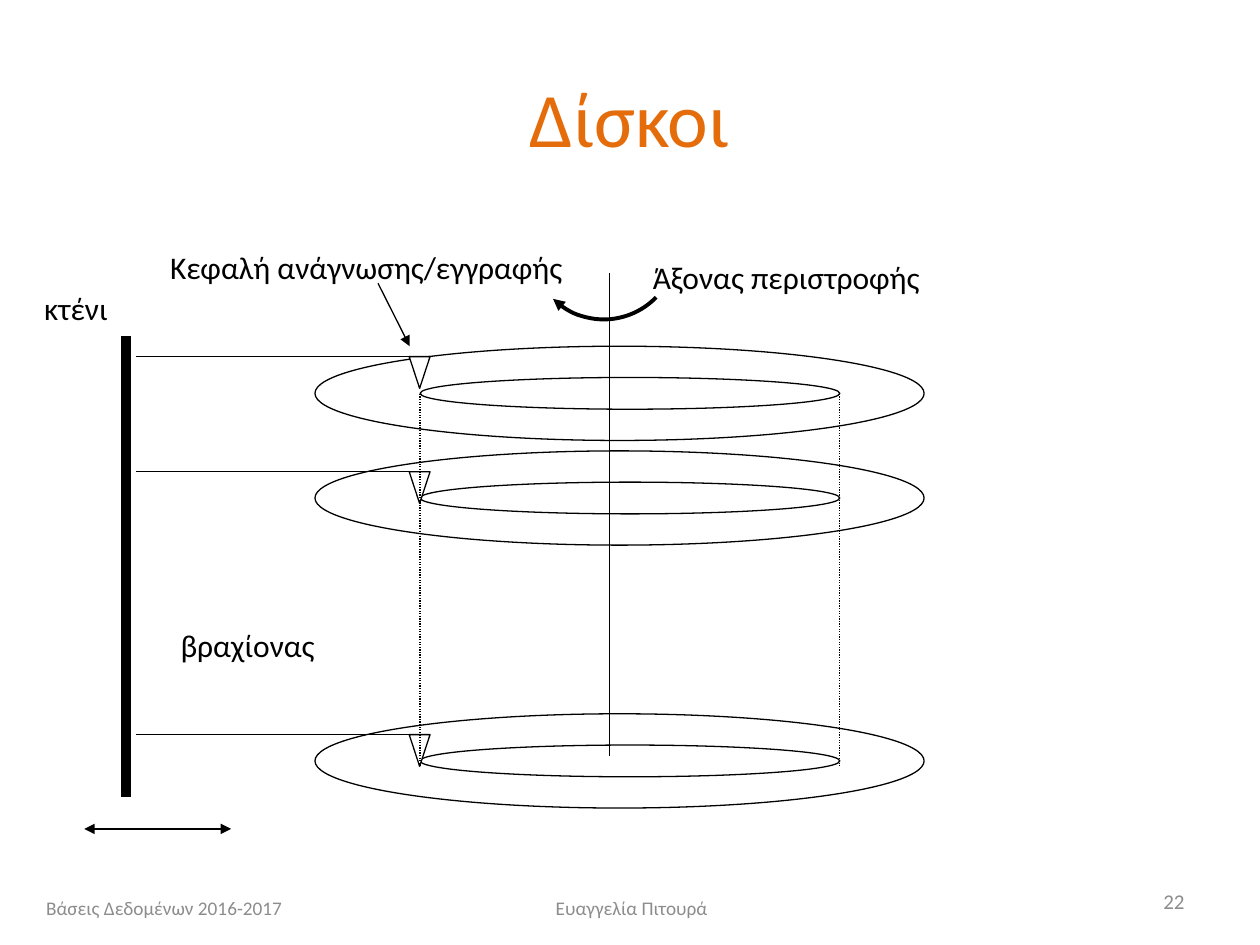
from lxml import etree
from pptx import Presentation
from pptx.dml.color import RGBColor
from pptx.enum.dml import MSO_LINE
from pptx.enum.shapes import MSO_CONNECTOR, MSO_SHAPE
from pptx.enum.text import MSO_ANCHOR, PP_ALIGN
from pptx.oxml.ns import qn
from pptx.util import Cm, Pt

BLACK = RGBColor(0x00, 0x00, 0x00)
WHITE = RGBColor(0xFF, 0xFF, 0xFF)
ORANGE = RGBColor(0xE4, 0x6C, 0x0A)
GREY = RGBColor(0x8C, 0x8C, 0x8C)
FONT = "Calibri"
STRAIGHT = MSO_CONNECTOR.STRAIGHT
DOTTED = MSO_LINE.ROUND_DOT
ELLIPSE, MERGE, ARC = MSO_SHAPE.OVAL, MSO_SHAPE.FLOWCHART_MERGE, MSO_SHAPE.ARC
TOP, MIDDLE = MSO_ANCHOR.TOP, MSO_ANCHOR.MIDDLE
LEFT, CENTER, RIGHT = PP_ALIGN.LEFT, PP_ALIGN.CENTER, PP_ALIGN.RIGHT


def format_text(text_frame, text, size, color, align, anchor):
    """Fill a text frame with one formatted paragraph."""
    text_frame.text = text
    text_frame.word_wrap = True
    text_frame.vertical_anchor = anchor
    paragraph = text_frame.paragraphs[0]
    paragraph.alignment = align
    font = paragraph.runs[0].font
    font.name, font.size, font.color.rgb = FONT, Pt(size), color


def add_label(slide, box, text, size=18, color=BLACK, align=LEFT, anchor=TOP):
    """Add a text box at box, given as left, top, width, height in cm."""
    shape = slide.shapes.add_textbox(*map(Cm, box))
    format_text(shape.text_frame, text, size, color, align, anchor)


def add_arrowheads(shape, *ends):
    """Put a triangle on the named ends of an outlined shape or connector."""
    outline = shape._element.spPr.find(qn("a:ln"))
    for end in ends:
        etree.SubElement(outline, qn(f"a:{end}"), type="triangle")


def add_line(slide, start, end, width=0.75, dash=None, arrows=()):
    """Draw a straight black line between two points in cm."""
    connector = slide.shapes.add_connector(STRAIGHT, *map(Cm, (*start, *end)))
    connector.line.color.rgb = BLACK
    connector.line.width = Pt(width)
    if dash:
        connector.line.dash_style = dash
    add_arrowheads(connector, *arrows)
    etree.SubElement(connector._element.spPr, qn("a:effectLst"))


def add_outline(slide, kind, box, width=0.75):
    """Add a white preset shape with a black outline."""
    shape = slide.shapes.add_shape(kind, *map(Cm, box))
    shape.shadow.inherit = False
    shape.fill.solid()
    shape.fill.fore_color.rgb = WHITE
    shape.line.color.rgb = BLACK
    shape.line.width = Pt(width)
    return shape


def add_platter(slide, left, top, arm_offset):
    """Draw a platter with its track, arm and read head."""
    arm_top = top + arm_offset
    head_left = left + 1.9
    add_outline(slide, ELLIPSE, (left, top, 12.28, 1.9))
    add_outline(slide, ELLIPSE, (left + 2.12, top + 0.63, 8.46, 0.64))
    add_line(slide, (left - 3.6, arm_top), (head_left + 0.42, arm_top))
    add_outline(slide, MERGE, (head_left, arm_top, 0.42, 0.64))


def add_rotation_arrow(slide, left, top, diameter):
    """Draw the curved arrow around the spindle."""
    arc = add_outline(slide, ARC, (left, top, diameter, diameter), 2.25)
    arc.fill.background()
    arc.rotation = 134.1
    add_arrowheads(arc, "tailEnd")


def add_disk_diagram(slide, left, top):
    """Draw the comb, the platters, the spindle and their labels."""
    platter_left = left + 5.71
    cylinder_left = platter_left + 2.12
    spindle = left + 11.64
    add_line(slide, (left + 1.9, top + 1.9), (left + 1.9, top + 11.2), 6)
    for offset, arm_offset in ((2.11, 0.21), (4.22, 0.42), (9.52, 0.42)):
        add_platter(slide, platter_left, top + offset, arm_offset)
    add_line(slide, (left + 1.06, top + 11.84), (left + 4.02, top + 11.84),
             arrows=("headEnd", "tailEnd"))
    for x in (cylinder_left, cylinder_left + 8.46):
        add_line(slide, (x, top + 3.07), (x, top + 10.57), dash=DOTTED)
    add_line(slide, (spindle, top + 0.63), (spindle, top + 10.36))
    add_rotation_arrow(slide, left + 10.06, top - 1.37, 2.94)
    for x, y, width, text in (
        (0, 0.84, 4.45, "κτένι"),
        (2.75, 7.62, 4.02, "βραχίονας"),
        (12.27, 0.2, 6.56, "Άξονας περιστροφής"),
        (2.54, 0, 12.28, "Κεφαλή ανάγνωσης/εγγραφής"),
    ):
        add_label(slide, (left + x, top + y, width, 1.02), text)
    add_line(slide, (left + 6.98, top + 0.84), (left + 7.62, top + 2.11),
             arrows=("tailEnd",))


def add_title(slide, left, top, width, height):
    """Place and format the title placeholder."""
    title = slide.shapes.title
    title.left, title.top = Cm(left), Cm(top)
    title.width, title.height = Cm(width), Cm(height)
    format_text(title.text_frame, "Δίσκοι", 44, ORANGE, CENTER, MIDDLE)


def add_footer(slide, left, top):
    """Add the course, the author and the page number."""
    for x, y, width, text, size, align in (
        (0, 0, 5.92, "Βάσεις Δεδομένων 2016-2017", 11, LEFT),
        (8.03, 0, 8.05, "Ευαγγελία Πιτουρά", 11, CENTER),
        (17.53, -0.15, 5.92, "22", 12, RIGHT),
    ):
        add_label(slide, (left + x, top + y, width, 1.02), text, size, GREY,
                  align, MIDDLE)


def main():
    """Build and save the presentation."""
    presentation = Presentation()
    presentation.slide_width, presentation.slide_height = Cm(25.4), Cm(19.05)
    slide = presentation.slides.add_slide(presentation.slide_layouts[5])
    add_title(slide, 1.27, 0.76, 22.86, 3.18)
    add_disk_diagram(slide, 0.64, 4.87)
    add_footer(slide, 0.68, 17.8)
    presentation.save("out.pptx")


if __name__ == "__main__":
    main()
